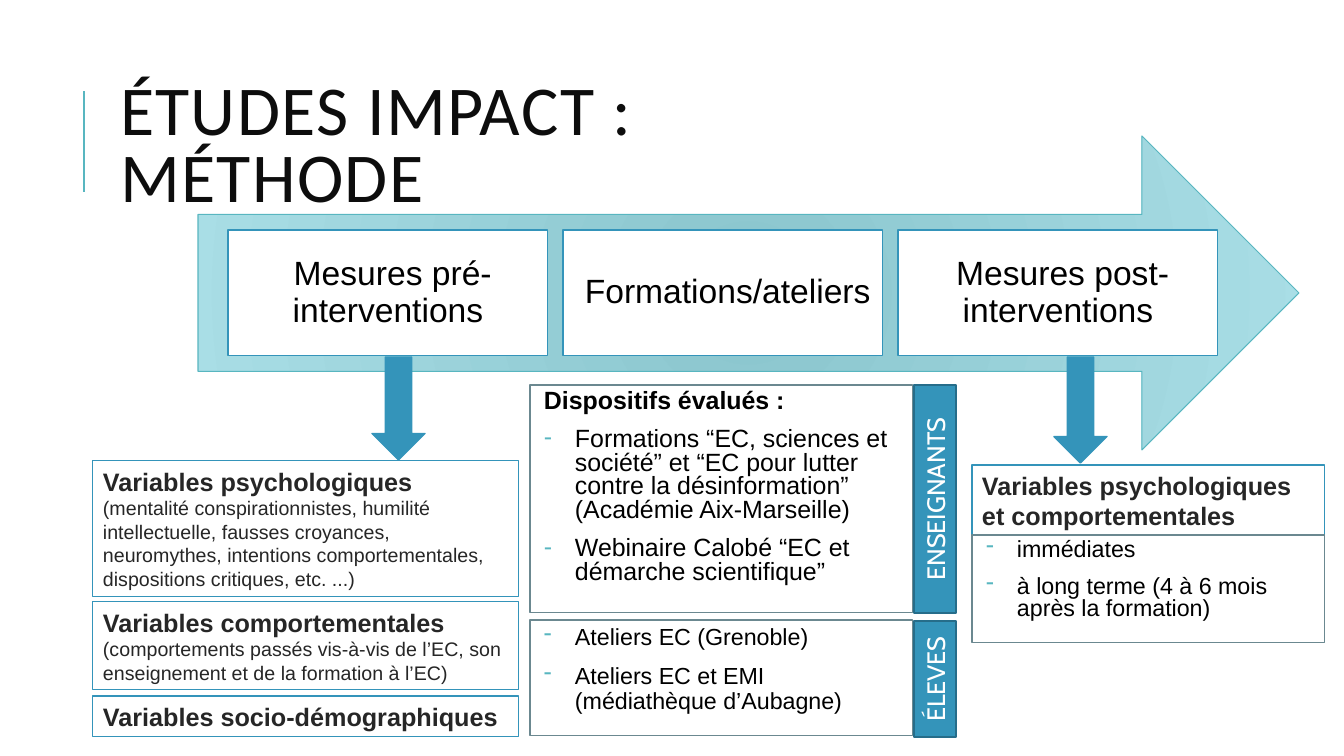
import pptx
import pptx.util
import pptx.dml.color
import pptx.enum.shapes
import pptx.enum.text
import pptx.oxml
import pptx.oxml.ns

PX = 914400 / 100.8
HUES = {
    "ink": "000000", "head": "0D0D0D", "dark": "262626", "white": "FFFFFF",
    "blue": "3494BA", "navy": "266D8A", "teal": "58B6C0", "gray": "6B8890",
    "deep": "8AC5CD", "pale": "A9DEE6",
}
FORM = pptx.enum.shapes.MSO_SHAPE
ALIGN = pptx.enum.text.PP_ALIGN
MID = pptx.enum.text.MSO_ANCHOR.MIDDLE
TOP = pptx.enum.text.MSO_ANCHOR.TOP


def px(n):
    return pptx.util.Emu(round(n * PX))


def hue(name):
    return pptx.dml.color.RGBColor.from_string(HUES[name])


def node(parent, tag, **attrs):
    part = pptx.oxml.ns.qn(tag)
    child = parent.makeelement(part, attrs)
    parent.append(child)
    return child


def place(shape, left, top, wide, high):
    shape.left, shape.top = px(left), px(top)
    shape.width, shape.height = px(wide), px(high)


def setup(shape, anchor=TOP, pad=5):
    """Prepare the text frame of a shape."""
    frame = shape.text_frame
    frame.word_wrap = True
    frame.auto_size = pptx.enum.text.MSO_AUTO_SIZE.NONE
    frame.vertical_anchor = anchor
    frame.margin_left = frame.margin_right = px(10)
    frame.margin_top = frame.margin_bottom = px(pad)
    return frame


def indent(para, bullet, left):
    props = para._p.get_or_add_pPr()
    hang = -31 if bullet else 0
    props.set("marL", str(px(left)))
    props.set("indent", str(px(hang)))
    if bullet:
        tint = node(props, "a:buClr")
        node(tint, "a:srgbClr", val=HUES["teal"])
        node(props, "a:buFontTx")
        node(props, "a:buChar", char="-")
    else:
        node(props, "a:buNone")


def write(frame, text, size=18, color="ink", bold=False, font="Arial",
          align=ALIGN.LEFT, lead=1.0, gap=0, bullet=False, left=0, join=False):
    """Add text as a new paragraph, or to the last one if join is set."""
    para = frame.paragraphs[-1]
    if not join:
        if para.runs:
            para = frame.add_paragraph()
        para.alignment = align
        para.line_spacing = lead
        para.space_before = pptx.util.Pt(gap)
        para.space_after = pptx.util.Pt(0)
        indent(para, bullet, left)
    run = para.add_run()
    run.text = text
    run.font.size = pptx.util.Pt(size)
    run.font.name = font
    run.font.bold = bold
    run.font.color.rgb = hue(color)
    return run


def edge(shape, color, width=0.75):
    shape.line.color.rgb = hue(color)
    shape.line.width = pptx.util.Pt(width)


def draw(slide, form, area, fill="white", line="blue", width=0.75):
    shape = slide.shapes.add_shape(form, *map(px, area))
    shape.shadow.inherit = False
    if fill:
        shape.fill.solid()
        shape.fill.fore_color.rgb = hue(fill)
    else:
        shape.fill.background()
    edge(shape, line, width)
    return shape


def glow(shape):
    """Fill a shape with a round gradient."""
    shape.fill.gradient()
    for stop, name in zip(shape.fill.gradient_stops, ("deep", "pale")):
        stop.color.rgb = hue(name)
    grad = shape._element.spPr.find(pptx.oxml.ns.qn("a:gradFill"))
    grad.remove(grad.find(pptx.oxml.ns.qn("a:lin")))
    ring = node(grad, "a:path", path="circle")
    node(ring, "a:fillToRect", l="100000", t="100000", r="100000", b="100000")


def rule(slide, x, top, end):
    line = slide.shapes.add_connector(
        pptx.enum.shapes.MSO_CONNECTOR.STRAIGHT, px(x), px(end), px(x), px(top))
    edge(line, "teal", 1.5)
    node(line._element.spPr, "a:effectLst")


def label(slide, left, top, wide, high, text):
    """Draw a tab whose text reads upwards."""
    shift = (high - wide) / 2
    tab = draw(slide, FORM.RECTANGLE, (left - shift, top + shift, high, wide),
               "blue", "navy", 1.25)
    tab.rotation = 270
    write(setup(tab, MID), text, color="white", font="Cabin", align=ALIGN.CENTER)


def bullets(frame, items, size, lead):
    for item in items:
        write(frame, item, size, lead=lead, gap=10, bullet=True, left=35)


def panel(slide, area, items, lead):
    shape = draw(slide, FORM.RECTANGLE, area, None, "gray")
    bullets(setup(shape), items, 16.6, lead)


def card(slide, area, head, note="", split=False):
    """Draw a box with a bold head and a note, on its own line if split."""
    frame = setup(draw(slide, FORM.RECTANGLE, area))
    write(frame, head, color="dark", bold=True)
    if note:
        write(frame, note, 14, "dark", join=not split)


def title(slide):
    shape = slide.shapes.title
    place(shape, 110, 83, 852, 131)
    run = write(setup(shape, MID), "ÉTUDES IMPACT : MÉTHODE", 50, "head",
                font="Calibri", lead=0.8)
    run._r.get_or_add_rPr().set("spc", "100")


def body(slide):
    shape = slide.placeholders[1]
    place(shape, 530, 385, 383, 228)
    edge(shape, "gray")
    frame = setup(shape)
    write(frame, "Dispositifs évalués : ", 17.8, bold=True, lead=0.8, gap=10, left=4)
    bullets(frame, (
        "Formations “EC, sciences et société” et “EC pour lutter contre "
        "la désinformation” (Académie Aix-Marseille)",
        "Webinaire Calobé “EC et démarche scientifique”"), 17.8, 0.8)


def steps(slide):
    glow(draw(slide, FORM.RIGHT_ARROW, (198, 136, 1101, 314), line="teal"))
    names = (" Mesures pré-interventions", " Formations/ateliers",
             " Mesures post-interventions")
    for i, name in enumerate(names):
        box = draw(slide, FORM.RECTANGLE, (228 + i * 335, 230, 320, 126))
        write(setup(box, MID, 10), name, 24, align=ALIGN.CENTER, lead=0.9)


def main():
    deck = pptx.Presentation()
    deck.slide_width, deck.slide_height = px(1344), px(756)
    slide = deck.slides.add_slide(deck.slide_layouts[1])
    rule(slide, 84, 91, 192)
    title(slide)
    body(slide)
    steps(slide)

    card(slide, (93, 461, 426, 136), "Variables psychologiques",
         "(mentalité conspirationnistes, humilité intellectuelle, fausses croyances, "
         "neuromythes, intentions comportementales, dispositions critiques, etc. ...)",
         split=True)
    card(slide, (93, 602, 426, 88), "Variables comportementales ",
         "(comportements passés vis-à-vis de l’EC, son enseignement "
         "et de la formation à l’EC)")
    card(slide, (93, 696, 426, 41), "Variables socio-démographiques")
    card(slide, (972, 465, 353, 71), "Variables psychologiques et comportementales")

    panel(slide, (972, 535, 353, 108),
          ("immédiates", "à long terme (4 à 6 mois après la formation)"), 0.8)
    panel(slide, (530, 620, 383, 116),
          ("Ateliers EC (Grenoble)", "Ateliers EC et EMI  (médiathèque d’Aubagne)"), 0.9)

    for left, high in ((372, 103), (1054, 106)):
        draw(slide, FORM.DOWN_ARROW, (left, 357, 53, high), "blue", width=1)
    label(slide, 914, 385, 42, 228, "ENSEIGNANTS")
    label(slide, 914, 621, 42, 116, "ÉLEVES")
    deck.save("out.pptx")


if __name__ == "__main__":
    main()
